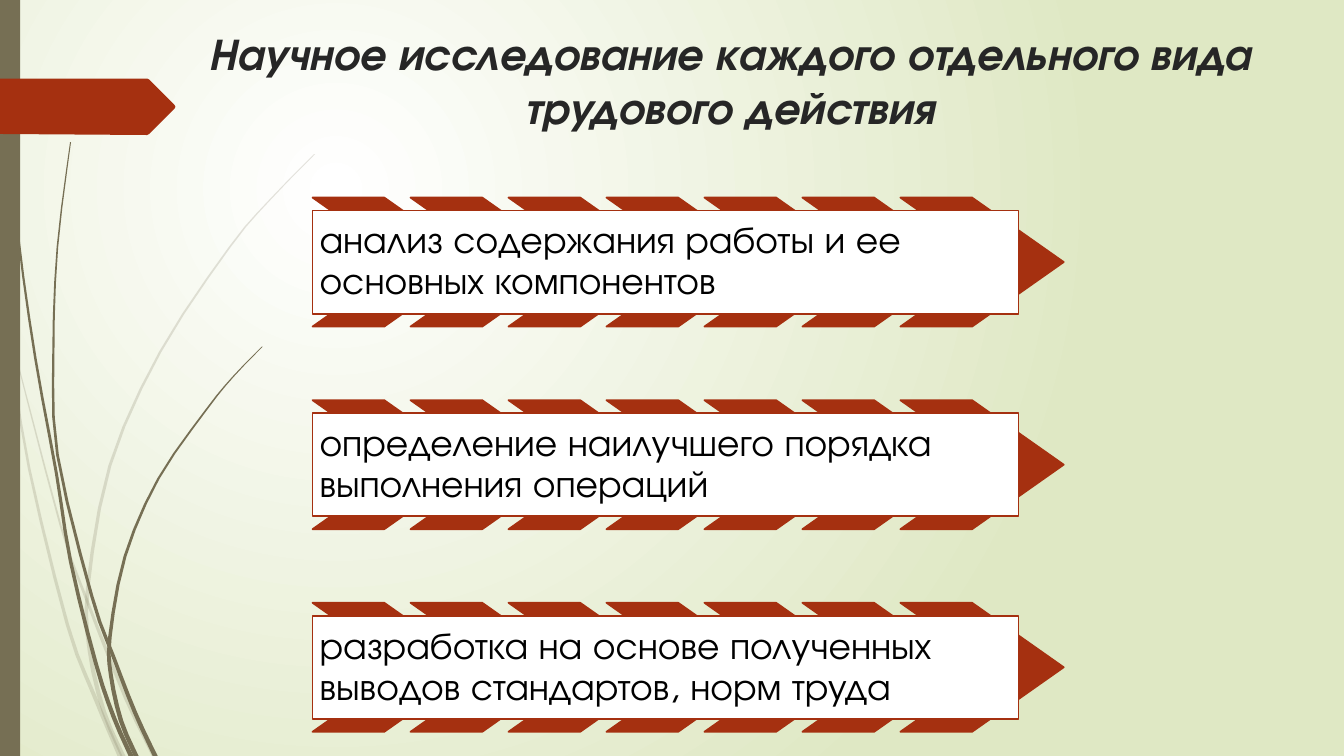
import lxml.etree
import pptx
import pptx.dml.color
import pptx.enum.shapes
import pptx.enum.text
import pptx.oxml.ns
import pptx.util

WIDTH, HEIGHT = 13.33, 7.5
FONT = "TeX Gyre Adventor"
OLIVE, RUST, WHITE, PALE = "766F54", "A53010", "FFFFFF", "DFE8C4"
SHAPES = pptx.enum.shapes.MSO_SHAPE
CURVE_STEPS = 3

TITLE = "Научное исследование каждого отдельного вида трудового действия"
STAGES = [
    "анализ содержания работы и ее основных компонентов",
    "определение наилучшего порядка выполнения операций",
    "разработка на основе полученных выводов стандартов, норм труда",
]

FAINT_BLADES = [
    [(0, 2.9), (0.1, 3.47), (0.29, 4.65), (0.67, 6.2), (0.93, 6.89), (1.19, 7.5)],
    [(0.15, 3.5), (0.6, 5.21), (0.86, 5.95), (1.25, 6.93), (1.53, 7.5)],
    [(3.12, 1.53), (2.68, 1.98), (2.28, 2.45), (1.59, 3.49), (1.09, 4.62),
     (0.87, 5.84), (0.89, 6.46), (1.03, 7.06), (1.22, 7.5)],
]
DARK_BLADES = [
    [(0.04, 0), (0.08, 1.1), (0.18, 2.33), (0.35, 3.55), (0.56, 4.7),
     (0.7, 5.57), (0.95, 6.58), (1.13, 7.12), (1.3, 7.5)],
    [(0.7, 1.41), (0.57, 2.45), (0.53, 3.49), (0.57, 4.51), (0.91, 5.91),
     (1.12, 6.5), (1.34, 7.07), (1.54, 7.5)],
    [(2.6, 3.44), (2.31, 3.74), (2.05, 4.06), (1.57, 4.75), (1.24, 5.52),
     (1.09, 6.32), (1.1, 6.7), (1.2, 7.15), (1.35, 7.5)],
]
POINTER = [(0, 0.78), (1.46, 0.78), (1.48, 0.79), (1.73, 1.04), (1.74, 1.06),
           (1.73, 1.08), (1.48, 1.33), (1.46, 1.34), (0, 1.33)]


def rgb(value):
    """Turn a hex string into a colour."""
    return pptx.dml.color.RGBColor.from_string(value)


def paint(shape, fill, line=None):
    """Give a shape a flat fill and either a coloured line or none."""
    shape.shadow.inherit = False
    shape.fill.solid()
    shape.fill.fore_color.rgb = rgb(fill)
    if line:
        shape.line.color.rgb = rgb(line)
        shape.line.width = pptx.util.Pt(1.25)
    else:
        shape.line.fill.background()


def add_block(page, kind, box, fill, line=None):
    """Add a painted preset shape in a box given in inches."""
    shape = page.shapes.add_shape(kind, *map(pptx.util.Inches, box))
    paint(shape, fill, line)
    return shape


def add_outline(page, points, fill, opacity=100):
    """Add a closed outline through points given in inches."""
    corners = [(pptx.util.Inches(x), pptx.util.Inches(y)) for x, y in points]
    builder = page.shapes.build_freeform(*corners[0])
    builder.add_line_segments(corners[1:])
    shape = builder.convert_to_shape()
    paint(shape, fill)
    if opacity < 100:
        color = shape.element.find(".//" + pptx.oxml.ns.qn("a:srgbClr"))
        alpha = lxml.etree.SubElement(color, pptx.oxml.ns.qn("a:alpha"))
        alpha.set("val", str(opacity * 1000))


def smooth(knots):
    """Sample a Catmull-Rom curve through the knots."""
    padded = [knots[0], *knots, knots[-1]]
    points = [knots[0]]
    for first in range(len(knots) - 1):
        window = padded[first:first + 4]
        for step in range(1, CURVE_STEPS + 1):
            t = step / CURVE_STEPS
            weights = ((-t + 2 * t ** 2 - t ** 3) / 2, (2 - 5 * t ** 2 + 3 * t ** 3) / 2,
                       (t + 4 * t ** 2 - 3 * t ** 3) / 2, (t ** 3 - t ** 2) / 2)
            points.append(tuple(sum(w * knot[axis] for w, knot in zip(weights, window))
                                for axis in (0, 1)))
    return points


def blade_outline(knots):
    """Widen a blade of grass evenly from its tip to its root."""
    spine = smooth(knots)
    halves = [0.005 + 0.02 * index / (len(spine) - 1) for index in range(len(spine))]
    right = [(x + half, y) for (x, y), half in zip(spine, halves)]
    left = [(max(x - half, 0), y) for (x, y), half in zip(spine, halves)]
    return right + left[::-1]


def add_backdrop(page):
    """Fill the page with a radial glow centred in its upper left."""
    fill = page.background.fill
    fill.gradient()
    for stop, color in zip(fill.gradient_stops, (WHITE, PALE)):
        stop.color.rgb = rgb(color)
    gradient = page.element.find(".//" + pptx.oxml.ns.qn("a:gradFill"))
    gradient.remove(gradient.find(pptx.oxml.ns.qn("a:lin")))
    glow = lxml.etree.SubElement(gradient, pptx.oxml.ns.qn("a:path"), path="circle")
    lxml.etree.SubElement(glow, pptx.oxml.ns.qn("a:fillToRect"),
                          l="50000", t="50000", r="100000", b="100000")


def add_side_decor(page):
    """Draw the grass, the side strip and the red pointer."""
    for blades, opacity in ((FAINT_BLADES, 20), (DARK_BLADES, 100)):
        for knots in blades:
            add_outline(page, blade_outline(knots), OLIVE, opacity)
    add_block(page, SHAPES.RECTANGLE, (0, 0, 0.015 * WIDTH, HEIGHT), OLIVE)
    add_outline(page, POINTER, RUST)


def set_title(page, box):
    """Place and format the title placeholder."""
    title = page.shapes.title
    title.left, title.top, title.width, title.height = map(pptx.util.Inches, box)
    frame = title.text_frame
    frame.text = TITLE
    frame.word_wrap = True
    frame.auto_size = pptx.enum.text.MSO_AUTO_SIZE.NONE
    frame.vertical_anchor = pptx.enum.text.MSO_ANCHOR.TOP
    para = frame.paragraphs[0]
    para.alignment = pptx.enum.text.PP_ALIGN.CENTER
    para.font.name, para.font.size = FONT, pptx.util.Pt(32)
    para.font.bold = para.font.italic = True
    para.font.color.rgb = rgb("262626")


def add_stage(page, text, box):
    """Draw a row of seven chevrons with a text panel across it."""
    left, top, width, height = box
    chevron_width = 1.62
    step = (width - chevron_width) / 6
    for column in range(7):
        chevron = add_block(page, SHAPES.CHEVRON,
                            (left + column * step, top, chevron_width, height), RUST, RUST)
        chevron.adjustments[0] = 0.71
    panel = add_block(page, SHAPES.RECTANGLE,
                      (left, top + 0.1 * height, 0.94 * width, 0.8 * height), WHITE, RUST)
    frame = panel.text_frame
    frame.text = text
    frame.word_wrap = True
    frame.vertical_anchor = pptx.enum.text.MSO_ANCHOR.MIDDLE
    frame.margin_left = frame.margin_right = pptx.util.Inches(0.07)
    frame.margin_top = frame.margin_bottom = pptx.util.Inches(0.07)
    para = frame.paragraphs[0]
    para.alignment = pptx.enum.text.PP_ALIGN.LEFT
    para.line_spacing = 0.9
    para.font.name, para.font.size = FONT, pptx.util.Pt(27)
    para.font.color.rgb = rgb("000000")


def main():
    """Build the slide and save it."""
    deck = pptx.Presentation()
    deck.slide_width = pptx.util.Inches(WIDTH)
    deck.slide_height = pptx.util.Inches(HEIGHT)
    page = deck.slides.add_slide(deck.slide_layouts[5])
    add_backdrop(page)
    add_side_decor(page)
    set_title(page, (1.72, 0.21, 11.04, 1.4))
    for row, text in enumerate(STAGES):
        add_stage(page, text, (3.1, 1.96 + row * 2.01, 7.45, 1.28))
    deck.save("out.pptx")


if __name__ == "__main__":
    main()
